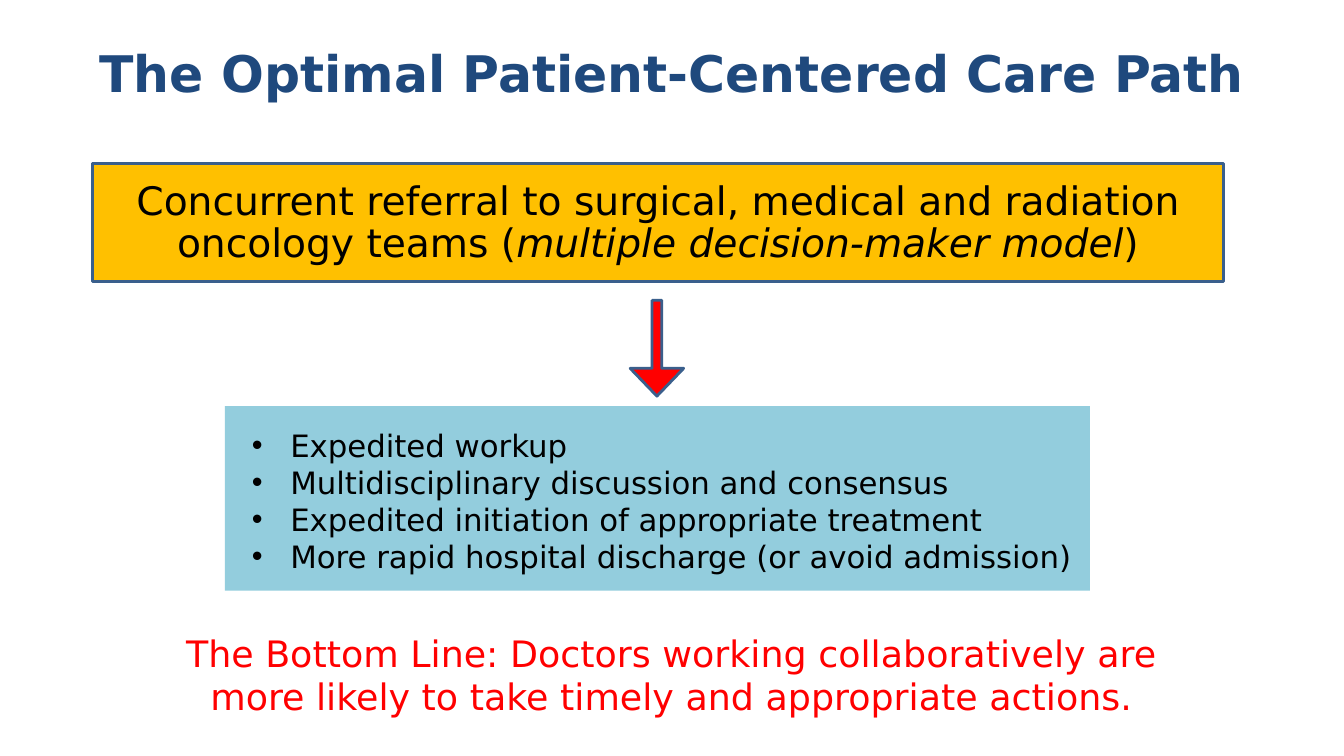
from pptx import Presentation
from pptx import util as u
from pptx.dml import color
from pptx.enum import shapes, text
from pptx.oxml import ns
from lxml import etree

WIDTH, HEIGHT = 13.33, 7.5
NAVY, OUTLINE, AMBER, AQUA = "1F497D", "3A5F8C", "FFC000", "93CDDD"
RED, BLACK = "FF0000", "000000"
OUTCOMES = [
    "Expedited workup",
    "Multidisciplinary discussion and consensus",
    "Expedited initiation of appropriate treatment",
    "More rapid hospital discharge (or avoid admission)",
]


def colour(value):
    return color.RGBColor.from_string(value)


class CarePathSlide:
    """Draws styled elements on one page, with places in percent of its size."""

    font = "DejaVu Sans"
    outline_width = u.Pt(2)
    bullet_indent = u.Inches(0.38)

    def __init__(self, deck):
        self.deck = deck
        self.page = deck.slides.add_slide(deck.slide_layouts[1])

    def place(self, left, top, width, height):
        across, down = self.deck.slide_width / 100, self.deck.slide_height / 100
        return [round(n) for n in (left * across, top * down, width * across, height * down)]

    def move(self, holder, area):
        holder.left, holder.top, holder.width, holder.height = self.place(*area)

    def add_spans(self, para, spans, size, ink, bold=False):
        for words, italic in spans:
            span = para.add_run()
            span.text = words
            span.font.name = self.font
            span.font.size = u.Pt(size)
            span.font.bold = bold
            span.font.italic = italic
            span.font.color.rgb = colour(ink)

    def title(self, area, words, size, ink):
        holder = self.page.shapes.title
        self.move(holder, area)
        holder.text_frame.vertical_anchor = text.MSO_ANCHOR.MIDDLE
        para = holder.text_frame.paragraphs[0]
        para.alignment = text.PP_ALIGN.CENTER
        self.add_spans(para, [(words, False)], size, ink, bold=True)

    def shape(self, kind, area, fill, line=None, adjustments=()):
        figure = self.page.shapes.add_shape(kind, *self.place(*area))
        figure.shadow.inherit = False
        figure.fill.solid()
        figure.fill.fore_color.rgb = colour(fill)
        if line:
            figure.line.color.rgb = colour(line)
            figure.line.width = self.outline_width
        else:
            figure.line.fill.background()
        for index, value in enumerate(adjustments):
            figure.adjustments[index] = value

    def statement(self, area, spans, size, ink, line_spacing=1.0):
        frame = self.page.shapes.add_textbox(*self.place(*area)).text_frame
        frame.word_wrap = True
        para = frame.paragraphs[0]
        para.alignment = text.PP_ALIGN.CENTER
        para.line_spacing = line_spacing
        self.add_spans(para, spans, size, ink)

    def bullets(self, area, items, size, ink):
        holder = self.page.placeholders[1]
        self.move(holder, area)
        holder.element.getparent().append(holder.element)
        frame = holder.text_frame
        frame.word_wrap = True
        frame.auto_size = text.MSO_AUTO_SIZE.NONE
        frame.vertical_anchor = text.MSO_ANCHOR.TOP
        for index, item in enumerate(items):
            para = frame.add_paragraph() if index else frame.paragraphs[0]
            properties = para._p.get_or_add_pPr()
            properties.set("marL", str(int(self.bullet_indent)))
            properties.set("indent", str(-int(self.bullet_indent)))
            etree.SubElement(properties, ns.qn("a:buChar"), char="•")
            para.space_before = u.Pt(0)
            self.add_spans(para, [(item, False)], size, ink)


def main():
    deck = Presentation()
    deck.slide_width, deck.slide_height = u.Inches(WIDTH), u.Inches(HEIGHT)
    slide = CarePathSlide(deck)
    rectangle = shapes.MSO_SHAPE.RECTANGLE

    slide.title((0, 0.13, 100, 18.8), "The Optimal Patient-Centered Care Path", 36, NAVY)
    slide.shape(rectangle, (6.9, 21.6, 84.17, 15.6), AMBER, OUTLINE)
    referral = [
        ("Concurrent referral to surgical, medical and radiation oncology teams (", False),
        ("multiple decision-maker model", True),
        (")", False),
    ]
    slide.statement((8.33, 23.33, 81.25, 13.07), referral, 28, BLACK, line_spacing=0.9)
    slide.shape(rectangle, (16.73, 53.73, 64.37, 24.4), AQUA)
    slide.bullets((18, 55.73, 67.74, 21.07), OUTCOMES, 22, BLACK)
    slide.shape(shapes.MSO_SHAPE.DOWN_ARROW, (46.89, 39.73, 3.98, 12.67), RED, OUTLINE, (0.18, 0.52))
    bottom_line = (
        "The Bottom Line: Doctors working collaboratively are "
        "more likely to take timely and appropriate actions."
    )
    slide.statement((12.08, 82.8, 75.84, 13.07), [(bottom_line, False)], 26, RED)
    deck.save("out.pptx")


if __name__ == "__main__":
    main()
